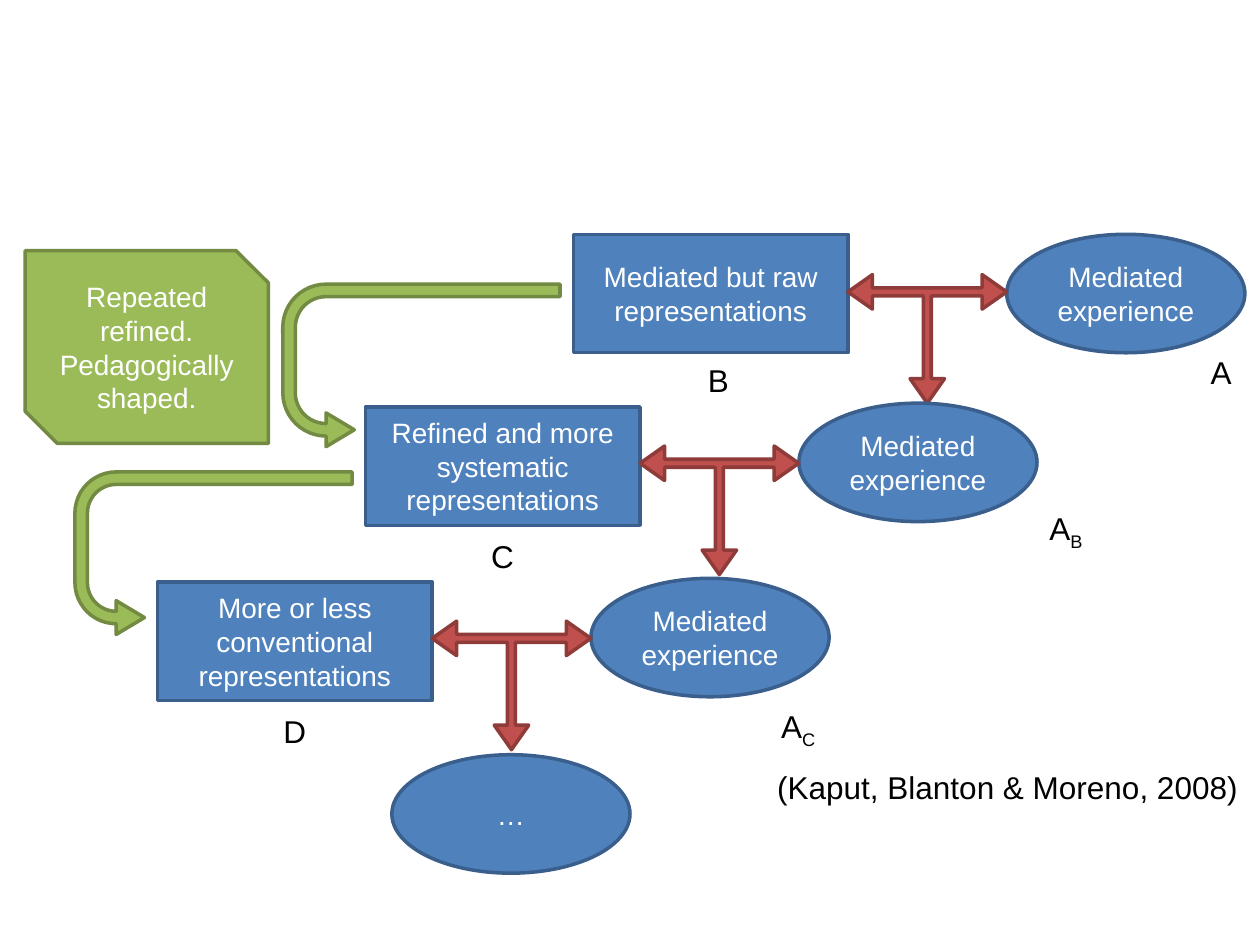
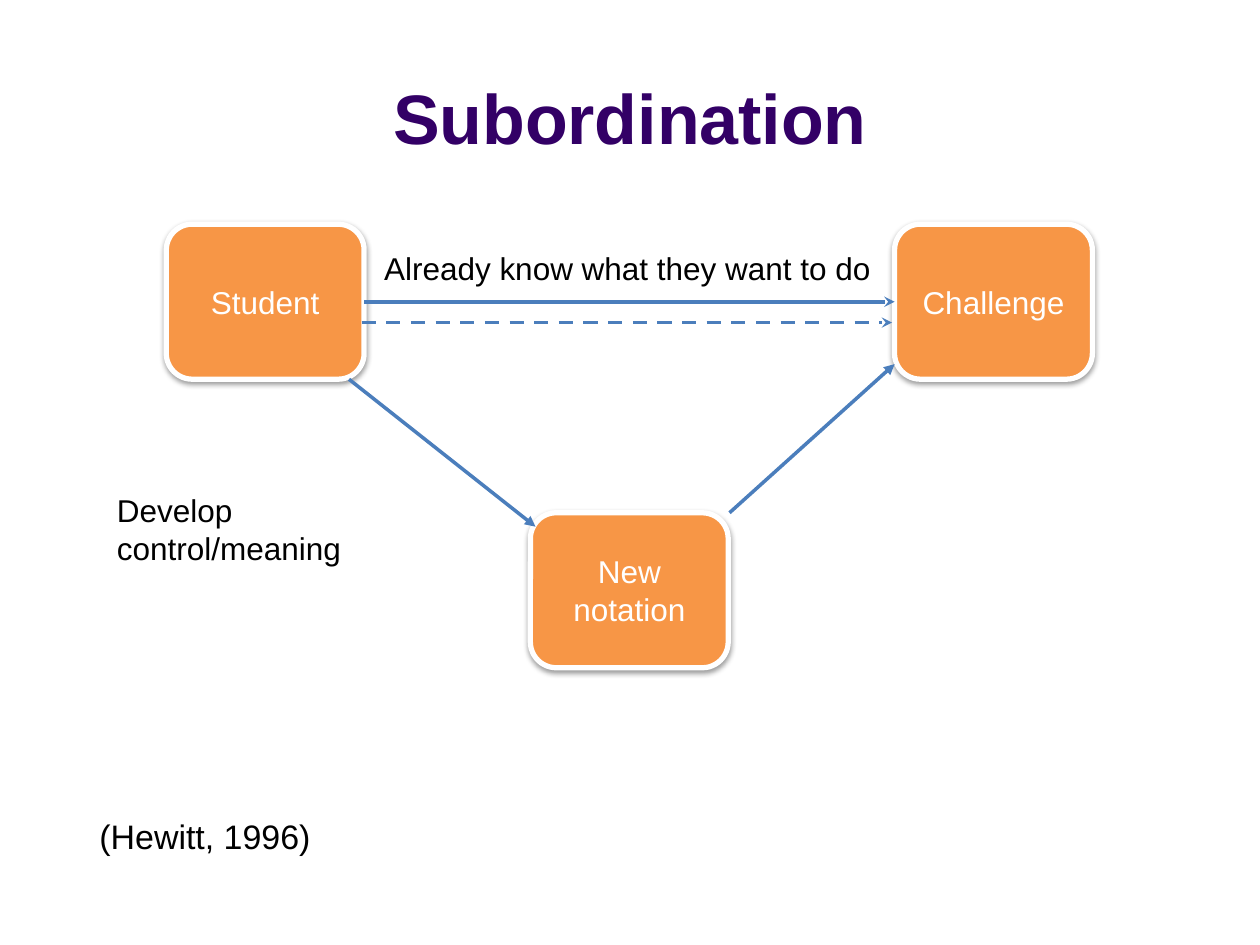
import pptx
import pptx.util
import pptx.dml.color
import pptx.enum.dml
import pptx.enum.shapes
import pptx.enum.text
import pptx.oxml.ns
import lxml.etree

Inches = pptx.util.Inches
Pt = pptx.util.Pt
SHAPE = pptx.enum.shapes.MSO_SHAPE
ALIGN = pptx.enum.text.PP_ALIGN
qn = pptx.oxml.ns.qn

BLUE, BLUE_EDGE = "4F81BD", "3A5F8C"
RED, RED_EDGE = "C0504D", "8E3B39"
GREEN, GREEN_EDGE = "9BBB59", "738A42"
ORANGE, LINK = "F79646", "4B7EBC"
WHITE, BLACK, PURPLE = "FFFFFF", "000000", "330066"


def color(value):
    return pptx.dml.color.RGBColor.from_string(value)


def write(frame, text, size=18, ink=BLACK, bold=False, align=ALIGN.LEFT,
          anchor=pptx.enum.text.MSO_ANCHOR.TOP, subscript=None):
    frame.vertical_anchor = anchor
    paragraph = frame.paragraphs[0]
    paragraph.alignment = align
    for part in filter(None, (text, subscript)):
        run = paragraph.add_run()
        run.text = part
        run.font.name = "Arial"
        run.font.size = Pt(size)
        run.font.bold = bold
        run.font.color.rgb = color(ink)
        if part is subscript:
            run.font._element.set("baseline", "-25000")


class Deck:
    MIDDLE = {"align": ALIGN.CENTER, "anchor": pptx.enum.text.MSO_ANCHOR.MIDDLE}

    def __init__(self):
        self.presentation = pptx.Presentation()
        self.presentation.slide_width = Inches(10)
        self.presentation.slide_height = Inches(7.5)
        self.slide = None

    def new_slide(self, title=None):
        layout = self.presentation.slide_layouts[5 if title else 6]
        self.slide = self.presentation.slides.add_slide(layout)
        if title:
            heading = self.slide.shapes.title
            heading.left, heading.top = Inches(0.5), Inches(0.3)
            heading.width, heading.height = Inches(9), Inches(1.25)
            write(heading.text_frame, title, size=40, ink=PURPLE, bold=True, **self.MIDDLE)

    def shape(self, kind, left, top, width, height, fill, edge, text=None, size=16,
              weight=2, adjust=(), rotation=0, flip=False):
        item = self.slide.shapes.add_shape(
            kind, Inches(left), Inches(top), Inches(width), Inches(height))
        item.shadow.inherit = False
        item.fill.solid()
        item.fill.fore_color.rgb = color(fill)
        item.line.color.rgb = color(edge)
        item.line.width = Pt(weight)
        item.rotation = rotation
        for index, value in enumerate(adjust):
            item.adjustments[index] = value
        if flip:
            item._element.spPr.find(qn("a:xfrm")).set("flipV", "1")
        if text:
            write(item.text_frame, text, size=size, ink=WHITE, **self.MIDDLE)
        return item

    def card(self, left, top, text):
        item = self.shape(SHAPE.ROUNDED_RECTANGLE, left, top, 1.57, 1.23, ORANGE, WHITE,
                          text, size=18, weight=3)
        effects = item._element.spPr.find(qn("a:effectLst"))
        shadow = lxml.etree.SubElement(
            effects, qn("a:outerShdw"), blurRad=str(Pt(3.1)), dist=str(Pt(1.6)),
            dir="5400000", rotWithShape="0")
        tint = lxml.etree.SubElement(shadow, qn("a:srgbClr"), val=BLACK)
        lxml.etree.SubElement(tint, qn("a:alpha"), val="38000")
        return item

    def label(self, left, top, width, text, height=0.4, wrap=False, **style):
        box = self.slide.shapes.add_textbox(
            Inches(left), Inches(top), Inches(width), Inches(height))
        box.text_frame.word_wrap = wrap
        box.text_frame.auto_size = pptx.enum.text.MSO_AUTO_SIZE.SHAPE_TO_FIT_TEXT
        write(box.text_frame, text, **style)

    def arrow(self, start, end, head="triangle", dashed=False):
        link = self.slide.shapes.add_connector(
            pptx.enum.shapes.MSO_CONNECTOR.STRAIGHT, *map(Inches, start + end))
        link.line.color.rgb = color(LINK)
        link.line.width = Pt(2)
        if dashed:
            link.line.dash_style = pptx.enum.dml.MSO_LINE.DASH
        outline = link._element.spPr.find(qn("a:ln"))
        lxml.etree.SubElement(outline, qn("a:tailEnd"), type=head)
        lxml.etree.SubElement(link._element.spPr, qn("a:effectLst"))
        return link


def representations(deck):
    deck.new_slide()
    stages = [
        ("Mediated but raw representations", 1.86, 1.86, 2.18),
        ("Refined and more systematic representations", 3.23, 3.2, 3.54),
        ("More or less conventional representations", 4.62, 4.59, 4.93),
    ]
    for index, (stage, stage_top, experience_top, link_top) in enumerate(stages):
        shift = 1.65 * index
        deck.shape(SHAPE.OVAL, 7.99 - shift, experience_top, 1.89, 0.94, BLUE, BLUE_EDGE,
                   "Mediated experience")
        deck.shape(SHAPE.RECTANGLE, 4.55 - shift, stage_top, 2.18, 0.94, BLUE, BLUE_EDGE,
                   stage)
        deck.shape(SHAPE.LEFT_RIGHT_UP_ARROW, 6.73 - shift, link_top, 1.26, 1.02, RED,
                   RED_EDGE, adjust=(0.062, 0.134, 0.191), flip=True)
    for left, top, bend in [(2.7, 1.8, 0.258), (1.05, 3.29, 0.251)]:
        deck.shape(SHAPE.U_TURN_ARROW, left, top, 1.29, 2.2, GREEN, GREEN_EDGE,
                   adjust=(0.077, 0.104, 0.174, 0.438, bend), rotation=90, flip=True)
    deck.shape(SHAPE.SNIP_2_DIAG_RECTANGLE, 0.2, 1.99, 1.93, 1.53, GREEN, GREEN_EDGE,
               "Repeated refined. Pedagogically shaped.")
    deck.shape(SHAPE.OVAL, 3.11, 5.99, 1.89, 0.94, BLUE, BLUE_EDGE, "…")

    for left, top, width, letter, subscript in [
        (5.52, 2.82, 0.37, "B", None),
        (9.51, 2.75, 0.37, "A", None),
        (2.15, 5.6, 0.38, "D", None),
        (3.8, 4.21, 0.38, "C", None),
        (8.23, 3.99, 0.48, "A", "B"),
        (6.1, 5.56, 0.49, "A", "C"),
    ]:
        deck.label(left, top, width, letter, subscript=subscript)
    deck.label(6.07, 6.05, 3.89, "(Kaput, Blanton & Moreno, 2008)")


def subordination(deck):
    deck.new_slide("Subordination")
    deck.label(0.69, 6.42, 2.2, "(Hewitt, 1996)", size=19.4)
    student = deck.card(1.32, 1.78, "Student")
    challenge = deck.card(7.1, 1.78, "Challenge")
    known = deck.arrow((2.89, 2.39), (7.1, 2.39), head="stealth")
    known.begin_connect(student, 3)
    known.end_connect(challenge, 1)
    deck.card(4.21, 4.07, "New notation")
    deck.arrow((2.77, 3.01), (4.25, 4.18))
    deck.arrow((5.79, 4.07), (7.1, 2.89))
    deck.label(2.95, 1.93, 4.1, "Already know what they want to do")
    deck.label(0.83, 3.85, 2.88, "Develop control/meaning", height=0.7, wrap=True)
    deck.arrow((2.87, 2.56), (7.08, 2.56), head="stealth", dashed=True)


def main():
    deck = Deck()
    representations(deck)
    subordination(deck)
    deck.presentation.save("out.pptx")


if __name__ == "__main__":
    main()
